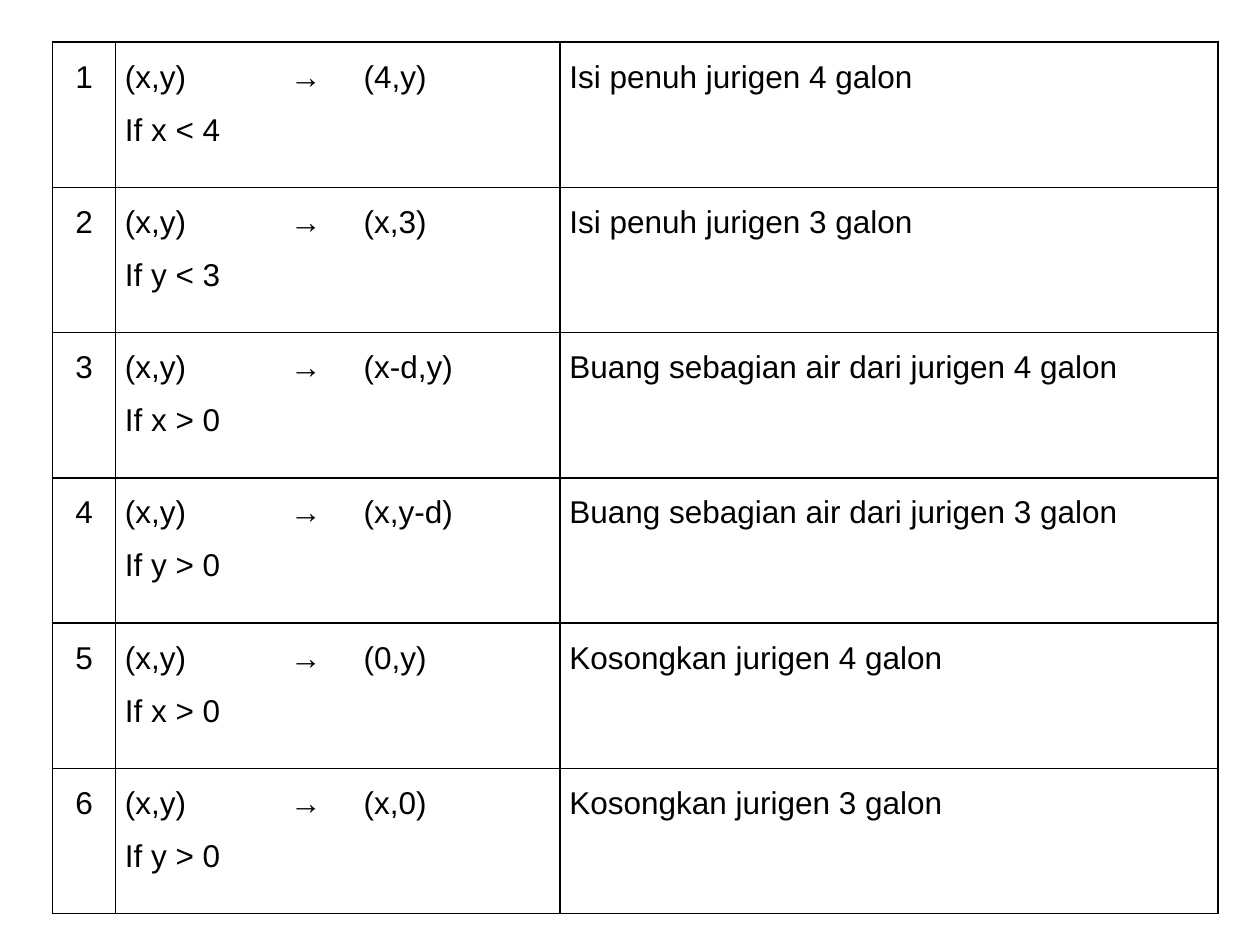
"""Build a slide with the table of production rules for the water jug problem."""
from dataclasses import dataclass

from lxml import etree
from pptx import Presentation
from pptx.dml.color import RGBColor
from pptx.enum.text import PP_ALIGN
from pptx.oxml.ns import qn
from pptx.util import Pt

CENTER, JUSTIFY = PP_ALIGN.CENTER, PP_ALIGN.JUSTIFY


@dataclass(frozen=True)
class Theme:
    font: str = "Arial"
    size: int = 18
    ink: str = "000000"
    border: int = 1


theme = Theme()


def set_borders(cell, drawn_sides):
    properties = cell._tc.get_or_add_tcPr()
    for position, side in enumerate("LRTB"):
        line = etree.Element(qn(f"a:ln{side}"), w=str(Pt(theme.border)))
        if side in drawn_sides:
            fill = etree.SubElement(line, qn("a:solidFill"))
            etree.SubElement(fill, qn("a:srgbClr"), val=theme.ink)
        else:
            etree.SubElement(line, qn("a:noFill"))
        properties.insert(position, line)


rules = [
    ("If x < 4", "(4,y)", "Isi penuh jurigen 4 galon"),
    ("If y < 3", "(x,3)", "Isi penuh jurigen 3 galon"),
    ("If x > 0", "(x-d,y)", "Buang sebagian air dari jurigen 4 galon"),
    ("If y > 0", "(x,y-d)", "Buang sebagian air dari jurigen 3 galon"),
    ("If x > 0", "(0,y)", "Kosongkan jurigen 4 galon"),
    ("If y > 0", "(x,0)", "Kosongkan jurigen 3 galon"),
]
column_widths = [36, 94.5, 42, 117.5, 376]
column_borders = ["LRTB", "LTB", "TB", "RTB", "LRTB"]
row_height = 83

prs = Presentation()
prs.slide_width, prs.slide_height = Pt(720), Pt(540)
slide = prs.slides.add_slide(prs.slide_layouts[6])

rule_table = slide.shapes.add_table(
    len(rules), len(column_widths), Pt(30), Pt(24),
    Pt(sum(column_widths)), Pt(row_height * len(rules)),
).table
rule_table.first_row = False
rule_table.horz_banding = False
for column, width in zip(rule_table.columns, column_widths):
    column.width = Pt(width)

for number, (condition, result, action) in enumerate(rules, start=1):
    row = rule_table.rows[number - 1]
    row.height = Pt(row_height)
    texts = [str(number), f"(x,y)\n{condition}", "→", result, action]
    for index, (cell, text) in enumerate(zip(row.cells, texts)):
        cell.margin_left = cell.margin_right = Pt(5.4)
        cell.margin_top = cell.margin_bottom = 0
        cell.fill.background()
        set_borders(cell, column_borders[index])
        cell.text_frame.text = text
        for paragraph in cell.text_frame.paragraphs:
            paragraph.alignment = CENTER if index == 0 else JUSTIFY
            paragraph.line_spacing = 1.5
            paragraph.font.name = theme.font
            paragraph.font.size = Pt(theme.size)
            paragraph.font.color.rgb = RGBColor.from_string(theme.ink)

prs.save("out.pptx")
